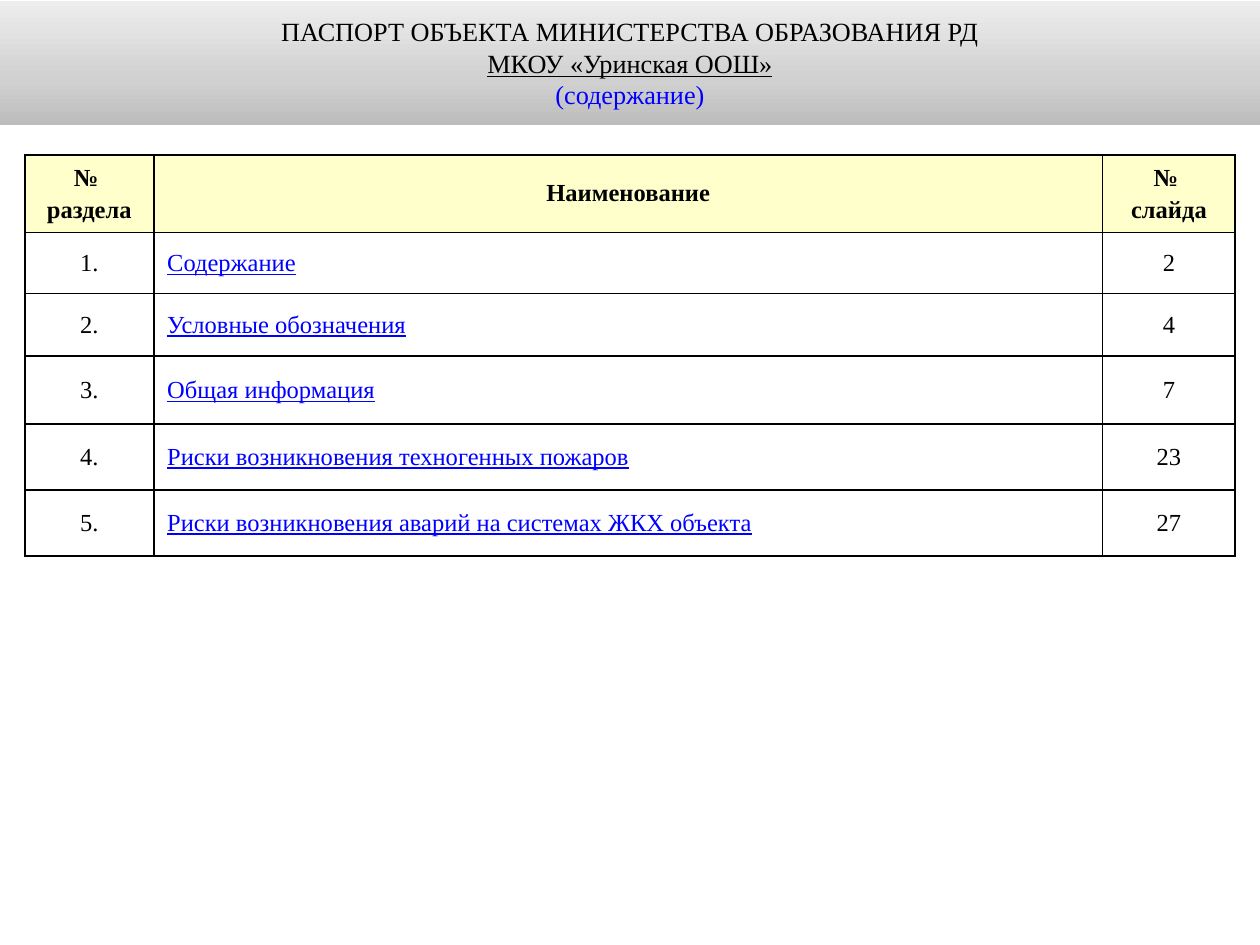
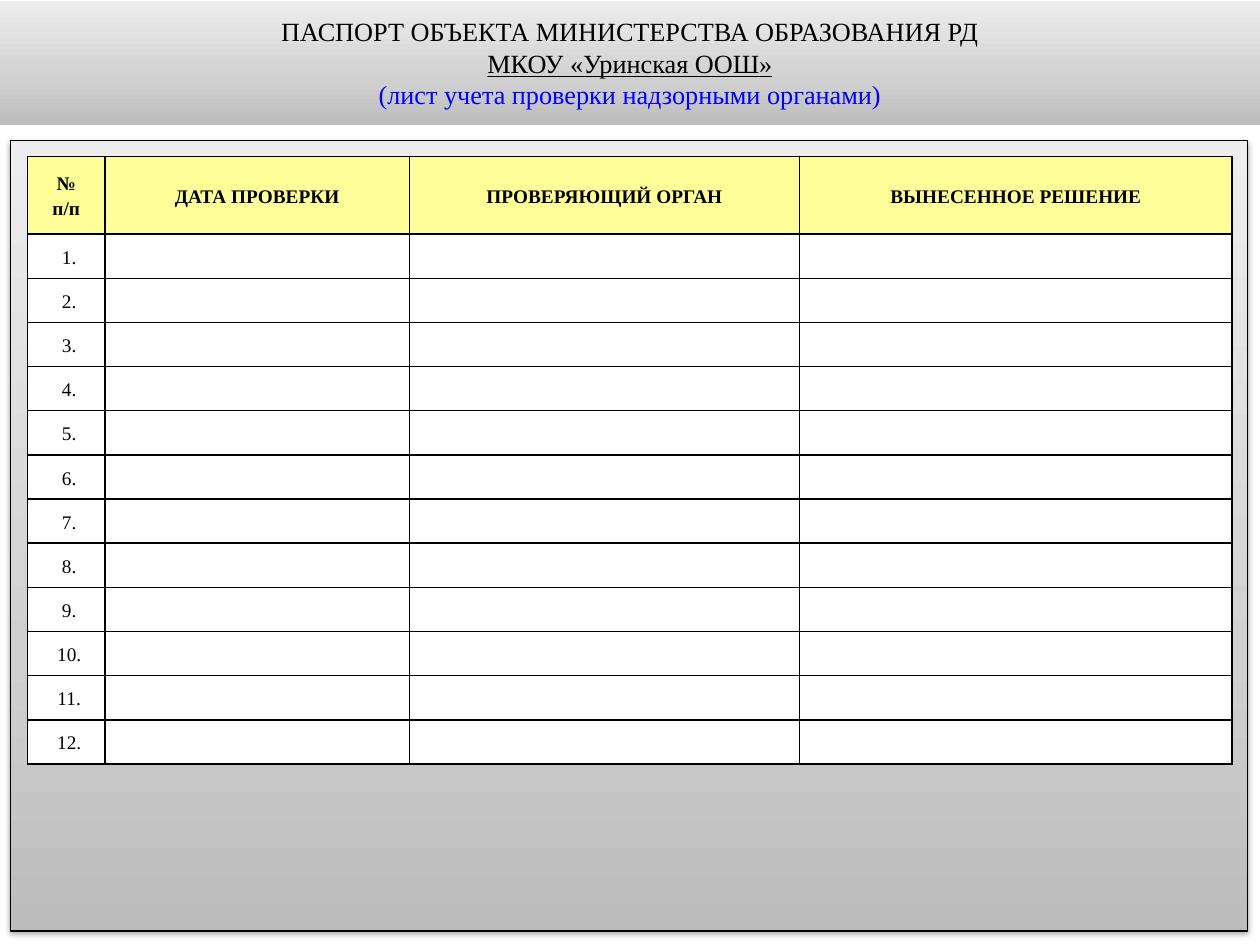
import copy
from dataclasses import dataclass

import lxml.etree
import pptx
import pptx.dml.color
import pptx.enum.shapes
import pptx.enum.text
import pptx.oxml
import pptx.oxml.ns
import pptx.util

Cm, Pt = pptx.util.Cm, pptx.util.Pt
CENTER = pptx.enum.text.PP_ALIGN.CENTER
LEFT = pptx.enum.text.PP_ALIGN.LEFT
MIDDLE = pptx.enum.text.MSO_ANCHOR.MIDDLE

# Content
ORGANISATION = ("ПАСПОРТ ОБЪЕКТА МИНИСТЕРСТВА ОБРАЗОВАНИЯ РД", "МКОУ «Уринская ООШ»")
CONTENTS_TITLE = "(содержание)"
CONTENTS_HEADER = ("№ \nраздела", "Наименование", "№ \nслайда")
CONTENTS = [
    ("Содержание", 2),
    ("Условные обозначения", 4),
    ("Общая информация", 7),
    ("Риски возникновения техногенных пожаров", 23),
    ("Риски возникновения аварий на системах ЖКХ объекта", 27),
]
INSPECTIONS_TITLE = "(лист учета проверки надзорными органами)"
INSPECTIONS_HEADER = ("№\nп/п", "ДАТА ПРОВЕРКИ", "ПРОВЕРЯЮЩИЙ ОРГАН", "ВЫНЕСЕННОЕ РЕШЕНИЕ")
INSPECTION_COUNT = 12


# Shared look
@dataclass(frozen=True)
class Theme:
    font: str = "Times New Roman"
    black: str = "000000"
    white: str = "FFFFFF"
    blue: str = "0000FF"
    contents_header: str = "FFFFCC"
    inspections_header: str = "FFFF99"
    gradient: tuple = ((0, "BCBCBC"), (0.35, "D0D0D0"), (1, "EDEDED"))
    title_size: float = 15
    contents_size: float = 14
    inspections_size: float = 11
    border: float = 1
    panel_line: float = 0.75


THEME = Theme()

CONTENTS_STYLE = {
    "size": THEME.contents_size,
    "header_fill": THEME.contents_header,
    "link_column": 1,
    "margins": {"margin_left": Cm(0.27), "margin_right": Cm(0.27),
                "margin_top": Cm(0.13), "margin_bottom": Cm(0.13)},
    "paragraph": {"space_before": Pt(2.8)},
    "number_margin": Cm(0.27),
}
INSPECTIONS_STYLE = {
    "size": THEME.inspections_size,
    "header_fill": THEME.inspections_header,
    "link_column": None,
    "margins": {"margin_left": Cm(0.08), "margin_right": Cm(0.08),
                "margin_top": 0, "margin_bottom": 0},
    "paragraph": {"line_spacing": 1.15},
    "number_margin": Cm(0.2),
}


def rgb(value):
    return pptx.dml.color.RGBColor.from_string(value)


def apply_format(target, values):
    for name, value in values.items():
        setattr(target, name, value)


def format_text(paragraph, size, color=THEME.black, **font_values):
    for run in paragraph.runs:
        apply_format(run.font, {"name": THEME.font, "size": Pt(size), **font_values})
        run.font.color.rgb = rgb(color)


def fill_gradient(shape):
    """Grey gradient, dark at the bottom and light at the top."""
    shape.fill.gradient()
    shape.fill.gradient_angle = 90
    stop_list = shape._element.spPr.find(".//" + pptx.oxml.ns.qn("a:gsLst"))
    stop_list.append(copy.deepcopy(stop_list[0]))
    for stop, (position, color) in zip(shape.fill.gradient_stops, THEME.gradient):
        stop.position = position
        stop.color.rgb = rgb(color)


def add_titled_slide(presentation, subject):
    slide = presentation.slides.add_slide(presentation.slide_layouts[5])
    title = slide.shapes.title
    apply_format(title, {"left": 0, "top": Cm(0.02),
                         "width": presentation.slide_width, "height": Cm(2.5)})
    fill_gradient(title)
    text_frame = title.text_frame
    text_frame.text = "\n".join((*ORGANISATION, subject))
    apply_format(text_frame, {"vertical_anchor": MIDDLE, "word_wrap": True,
                              "auto_size": pptx.enum.text.MSO_AUTO_SIZE.NONE})
    line_formats = ({}, {"underline": True}, {"color": THEME.blue})
    for paragraph, line_format in zip(text_frame.paragraphs, line_formats):
        paragraph.alignment = CENTER
        format_text(paragraph, THEME.title_size, **line_format)
    return slide


def add_borders(cell):
    properties = cell._tc.get_or_add_tcPr()
    for index, side in enumerate(("lnL", "lnR", "lnT", "lnB")):
        properties.insert(index, pptx.oxml.parse_xml(
            f'<a:{side} {pptx.oxml.ns.nsdecls("a")} w="{Pt(THEME.border)}">'
            f'<a:solidFill><a:srgbClr val="{THEME.black}"/></a:solidFill></a:{side}>'))


def format_cell(cell, text, is_header, column, style):
    cell.text = text
    cell.vertical_anchor = MIDDLE
    apply_format(cell, style["margins"])
    if column == 0 and not is_header:
        cell.margin_left = style["number_margin"]
    cell.fill.solid()
    cell.fill.fore_color.rgb = rgb(style["header_fill"] if is_header else THEME.white)
    add_borders(cell)
    is_link = column == style["link_column"] and not is_header
    for paragraph in cell.text_frame.paragraphs:
        apply_format(paragraph, {"alignment": LEFT if is_link else CENTER,
                                 **style["paragraph"]})
        format_text(paragraph, style["size"], THEME.blue if is_link else THEME.black,
                    bold=is_header, underline=is_link)


def add_grid(slide, left, top, widths, heights, rows, style):
    table = slide.shapes.add_table(
        len(rows), len(widths), Cm(left), Cm(top), Cm(sum(widths)), Cm(sum(heights))).table
    apply_format(table, {"first_row": False, "horz_banding": False})
    for column, width in zip(table.columns, widths):
        column.width = Cm(width)
    for row, height in zip(table.rows, heights):
        row.height = Cm(height)
    for row_index, texts in enumerate(rows):
        for column_index, text in enumerate(texts):
            format_cell(table.cell(row_index, column_index), text,
                        row_index == 0, column_index, style)


def add_panel(slide):
    panel = slide.shapes.add_shape(pptx.enum.shapes.MSO_SHAPE.RECTANGLE,
                                   Cm(0.21), Cm(2.84), Cm(24.94), Cm(15.93))
    fill_gradient(panel)
    panel.line.color.rgb = rgb(THEME.black)
    panel.line.width = Pt(THEME.panel_line)
    panel.shadow.inherit = False
    effects = panel._element.spPr.find(pptx.oxml.ns.qn("a:effectLst"))
    shadow = lxml.etree.SubElement(
        effects, pptx.oxml.ns.qn("a:outerShdw"), blurRad=str(Pt(3.1)),
        dist=str(Pt(1.6)), dir="5400000", rotWithShape="0")
    color = lxml.etree.SubElement(shadow, pptx.oxml.ns.qn("a:srgbClr"), val=THEME.black)
    lxml.etree.SubElement(color, pptx.oxml.ns.qn("a:alpha"), val="38000")


def main():
    presentation = pptx.Presentation()
    presentation.slide_width = Cm(25.4)
    presentation.slide_height = Cm(19.05)

    # Table of contents
    slide = add_titled_slide(presentation, CONTENTS_TITLE)
    rows = [CONTENTS_HEADER] + [
        (f"{number}.", name, str(page)) for number, (name, page) in enumerate(CONTENTS, 1)]
    add_grid(slide, 0.5, 3.12, (2.6, 19.13, 2.67),
             (1.57, 1.23, 1.26, 1.37, 1.33, 1.33), rows, CONTENTS_STYLE)

    # Inspection log
    slide = add_titled_slide(presentation, INSPECTIONS_TITLE)
    add_panel(slide)
    blanks = ("",) * (len(INSPECTIONS_HEADER) - 1)
    rows = [INSPECTIONS_HEADER] + [
        (f"{number}.", *blanks) for number in range(1, INSPECTION_COUNT + 1)]
    add_grid(slide, 0.55, 3.15, (1.57, 6.13, 7.87, 8.72),
             (1.57,) + (0.89,) * INSPECTION_COUNT, rows, INSPECTIONS_STYLE)

    presentation.save("out.pptx")


if __name__ == "__main__":
    main()
